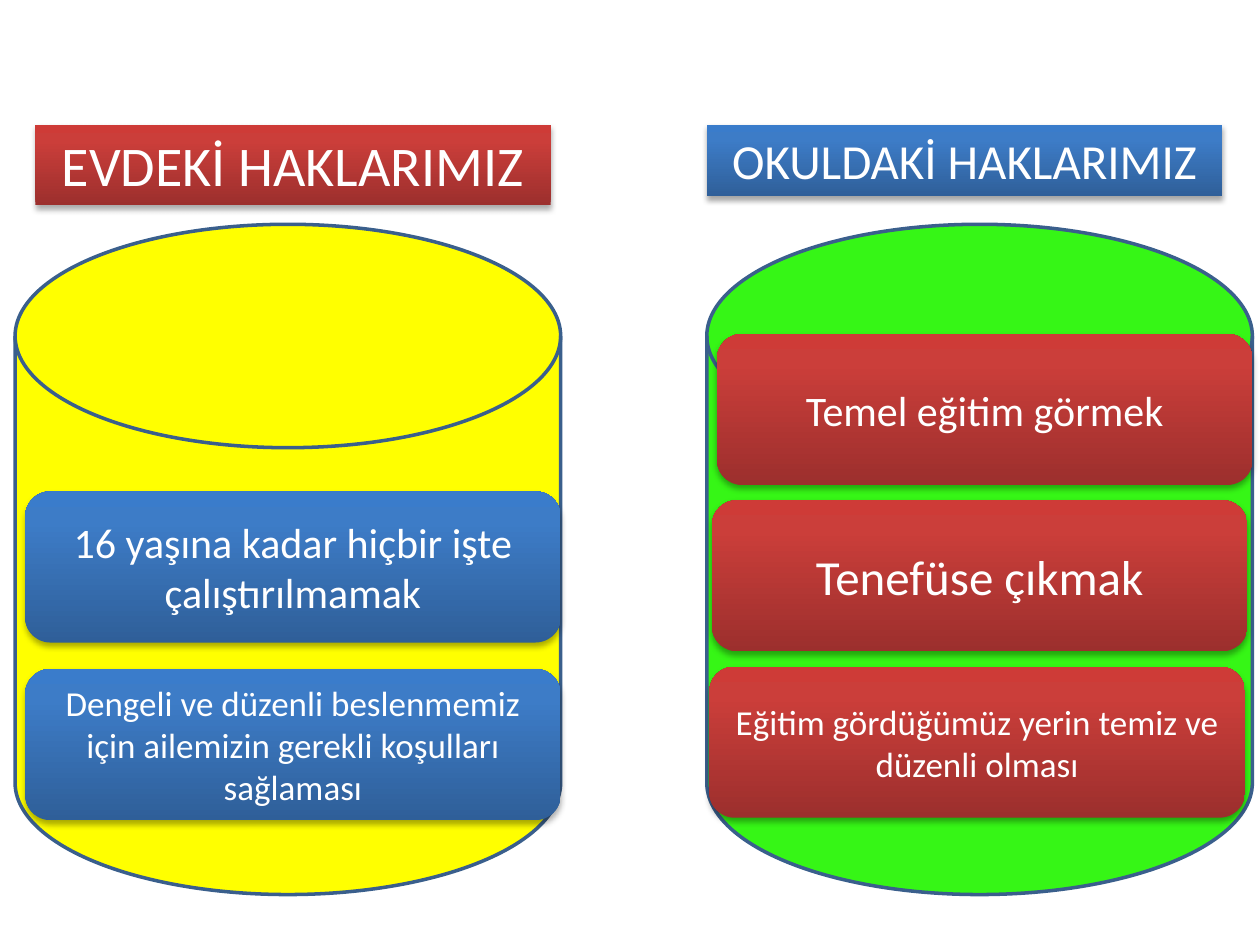
from copy import deepcopy

from lxml import etree
from pptx import Presentation
from pptx.dml.color import RGBColor
from pptx.enum.shapes import MSO_SHAPE as SHAPE
from pptx.enum.text import MSO_ANCHOR as ANCHOR, MSO_AUTO_SIZE as AUTO, PP_ALIGN as ALIGN
from pptx.oxml.ns import qn
from pptx.util import Inches, Pt

WHITE = RGBColor(0xFF, 0xFF, 0xFF)
YELLOW = RGBColor(0xFF, 0xFF, 0x00)
GREEN = RGBColor(0x36, 0xF6, 0x16)
OUTLINE = RGBColor(0x3A, 0x5F, 0x8C)
RED_STOPS = (RGBColor(0x9C, 0x2F, 0x2D), RGBColor(0xCB, 0x3E, 0x3A), RGBColor(0xCE, 0x3B, 0x37))
BLUE_STOPS = (RGBColor(0x2F, 0x5F, 0x99), RGBColor(0x3D, 0x7C, 0xC7), RGBColor(0x3A, 0x7C, 0xCB))
CARD_SHADOW = (32, 3.5, 2.2)  # opacity in percent, blur and distance in points
SOFT_SHADOW = (35, 3.1, 1.8)


def add_shadow(sp, opacity, blur, distance):
    """Give a shape a black shadow that falls straight down."""
    sp.shadow.inherit = False
    effects = sp._element.spPr.find(qn("a:effectLst"))
    outer = etree.SubElement(effects, qn("a:outerShdw"), blurRad=str(Pt(blur)),
                             dist=str(Pt(distance)), dir="5400000", rotWithShape="0")
    black = etree.SubElement(outer, qn("a:srgbClr"), val="000000")
    etree.SubElement(black, qn("a:alpha"), val=str(opacity * 1000))


def add_label(shape, left, top, width, height, text, size, colors, shadow):
    """Add a gradient-filled shape with centred white text."""
    sp = s.shapes.add_shape(shape, Inches(left), Inches(top), Inches(width), Inches(height))
    sp.fill.gradient()
    sp.fill.gradient_angle = 90
    first = sp._element.spPr.find(".//" + qn("a:gs"))
    first.addnext(deepcopy(first))
    for stop, position, color in zip(sp.fill.gradient_stops, (0, 0.8, 1), colors):
        stop.position = position
        stop.color.rgb = color
    sp.line.fill.background()
    add_shadow(sp, *shadow)
    tf = sp.text_frame
    tf.word_wrap = True
    tf.vertical_anchor = ANCHOR.MIDDLE
    tf.text = text
    p = tf.paragraphs[0]
    p.alignment = ALIGN.CENTER
    p.font.name = "Calibri"
    p.font.size = Pt(size)
    p.font.color.rgb = WHITE
    return sp


prs = Presentation()
prs.slide_width, prs.slide_height = Inches(10), Inches(7.5)
s = prs.slides.add_slide(prs.slide_layouts[6])

# Cylinders
for left, color in ((0.12, YELLOW), (5.61, GREEN)):
    sp = s.shapes.add_shape(SHAPE.FLOWCHART_MAGNETIC_DISK, Inches(left), Inches(1.78),
                            Inches(4.33), Inches(5.32))
    sp.fill.solid()
    sp.fill.fore_color.rgb = color
    sp.line.color.rgb = OUTLINE
    sp.line.width = Pt(2)
    sp.shadow.inherit = False

# Headings
headings = (
    (0.28, 0.64, "EVDEKİ HAKLARIMIZ", 32, RED_STOPS, CARD_SHADOW),
    (5.61, 0.57, "OKULDAKİ HAKLARIMIZ", 28, BLUE_STOPS, SOFT_SHADOW),
)
for left, height, text, size, colors, shadow in headings:
    sp = add_label(SHAPE.RECTANGLE, left, 0.99, 4.09, height, text, size, colors, shadow)
    sp.text_frame.vertical_anchor = ANCHOR.TOP
    sp.text_frame.auto_size = AUTO.SHAPE_TO_FIT_TEXT

# Rights at home (blue) and at school (red)
cards = (
    (0.2, 5.31, "Dengeli ve düzenli beslenmemiz için ailemizin gerekli koşulları sağlaması",
     20, BLUE_STOPS),
    (0.2, 3.9, "16 yaşına kadar hiçbir işte çalıştırılmamak", 24, BLUE_STOPS),
    (5.65, 3.97, "Tenefüse çıkmak", 28, RED_STOPS),
    (5.63, 5.29, "Eğitim gördüğümüz yerin temiz ve düzenli olması", 20, RED_STOPS),
    (5.69, 2.65, "Temel eğitim görmek", 24, RED_STOPS),
)
for left, top, text, size, colors in cards:
    add_label(SHAPE.ROUNDED_RECTANGLE, left, top, 4.25, 1.2, text, size, colors, CARD_SHADOW)

prs.save("out.pptx")
